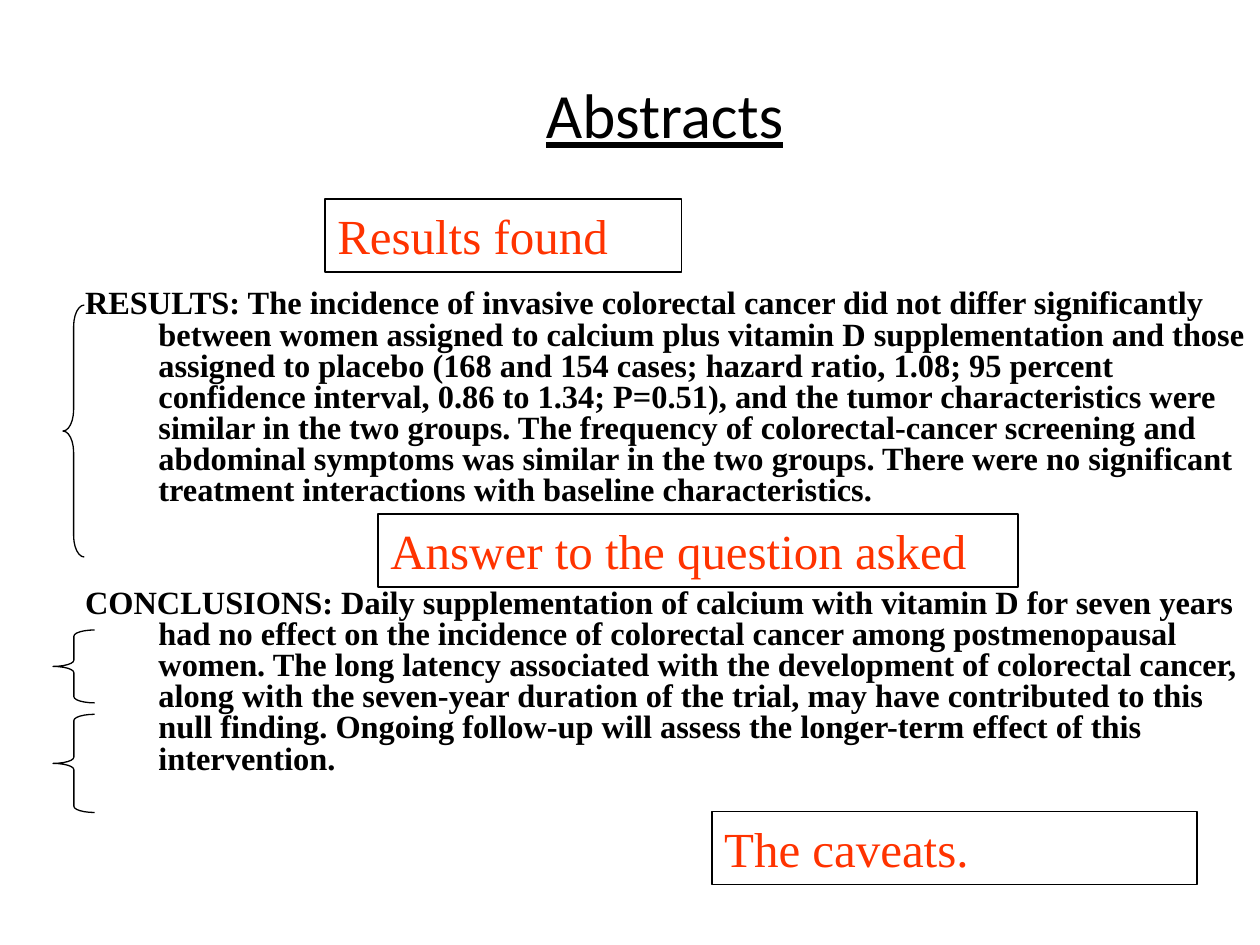
from lxml import etree
from pptx import Presentation
from pptx.dml.color import RGBColor
from pptx.enum.shapes import MSO_SHAPE
from pptx.enum.text import MSO_ANCHOR, MSO_AUTO_SIZE, PP_ALIGN
from pptx.oxml.ns import qn
from pptx.util import Cm, Pt

RECTANGLE, LEFT_BRACE = MSO_SHAPE.RECTANGLE, MSO_SHAPE.LEFT_BRACE
TOP, MIDDLE = MSO_ANCHOR.TOP, MSO_ANCHOR.MIDDLE
LEFT, CENTER = PP_ALIGN.LEFT, PP_ALIGN.CENTER
NO_AUTOFIT = MSO_AUTO_SIZE.NONE
BLACK, WHITE, ORANGE = "000000", "FFFFFF", "FF3300"
SERIF, SANS = "Times New Roman", "Calibri"
LABEL_HEIGHT = 1.47

RESULTS = (
    "RESULTS: The incidence of invasive colorectal cancer did not differ significantly "
    "between women assigned to calcium plus vitamin D supplementation and those assigned "
    "to placebo (168 and 154 cases; hazard ratio, 1.08; 95 percent confidence interval, "
    "0.86 to 1.34; P=0.51), and the tumor characteristics were similar in the two groups. "
    "The frequency of colorectal-cancer screening and abdominal symptoms was similar in "
    "the two groups. There were no significant treatment interactions with baseline "
    "characteristics."
)
CONCLUSIONS = (
    "CONCLUSIONS: Daily supplementation of calcium with vitamin D for seven years had no "
    "effect on the incidence of colorectal cancer among postmenopausal women. The long "
    "latency associated with the development of colorectal cancer, along with the "
    "seven-year duration of the trial, may have contributed to this null finding. Ongoing "
    "follow-up will assess the longer-term effect of this intervention."
)


def color(value):
    """Return the colour for a hex string."""
    return RGBColor.from_string(value)


def place(shape, box):
    """Set a shape's left, top, width and height in centimetres."""
    shape.left, shape.top, shape.width, shape.height = map(Cm, box)


def prepare_frame(shape, anchor):
    """Return a wrapping text frame with fixed size and the given anchor."""
    frame = shape.text_frame
    frame.word_wrap = True
    frame.auto_size = NO_AUTOFIT
    frame.vertical_anchor = anchor
    return frame


def write(paragraph, text, size, font=SERIF, fill=BLACK, align=LEFT, bold=False, underline=False):
    """Add formatted text to a paragraph."""
    paragraph.alignment = align
    run = paragraph.add_run()
    run.text = text
    run.font.name = font
    run.font.size = Pt(size)
    run.font.bold = bold
    run.font.underline = underline
    run.font.color.rgb = color(fill)


def add_title(slide, box):
    """Fill the title placeholder, raised by a deep bottom margin."""
    place(slide.shapes.title, box)
    frame = prepare_frame(slide.shapes.title, MIDDLE)
    frame.margin_bottom = Cm(1.65)
    write(frame.paragraphs[0], "Abstracts", 36, font=SANS, align=CENTER, underline=True)


def add_abstract(slide, box):
    """Fill the body placeholder with hanging paragraphs."""
    body = slide.placeholders[1]
    place(body, box)
    frame = prepare_frame(body, TOP)
    for index, (text, gap) in enumerate(((RESULTS, 0), (CONCLUSIONS, 46.8))):
        paragraph = frame.add_paragraph() if index else frame.paragraphs[0]
        paragraph.level = 1
        paragraph.line_spacing = 0.8
        paragraph.space_before = Pt(gap)
        write(paragraph, text, 18.5, bold=True)
        properties = paragraph._p.get_or_add_pPr()
        properties.set("marL", str(Cm(2.74)))
        properties.set("indent", str(Cm(-1.48)))
        etree.SubElement(properties, qn("a:buNone"))


def add_outline(group, kind, box, line_width):
    """Add a black-outlined shape to a group."""
    shape = group.shapes.add_shape(kind, *map(Cm, box))
    shape.shadow.inherit = False
    shape.line.color.rgb = color(BLACK)
    shape.line.width = Pt(line_width)
    return shape


def add_annotation(slide, box, text, label_offset, label_width, brace_offset, brace_size, curve):
    """Group a label and a brace, both offset from the given left and top."""
    left, top = box
    group = slide.shapes.add_group_shape()
    label_box = (left + label_offset[0], top + label_offset[1], label_width, LABEL_HEIGHT)
    label = add_outline(group, RECTANGLE, label_box, 1)
    label.fill.solid()
    label.fill.fore_color.rgb = color(WHITE)
    write(prepare_frame(label, MIDDLE).paragraphs[0], text, 28, fill=ORANGE)
    brace_box = (left + brace_offset[0], top + brace_offset[1], *brace_size)
    brace = add_outline(group, LEFT_BRACE, brace_box, 0.75)
    brace.fill.background()
    brace.adjustments[0] = curve


def main():
    """Build and save the slide."""
    presentation = Presentation()
    presentation.slide_width, presentation.slide_height = Cm(25.4), Cm(19.05)
    slide = presentation.slides.add_slide(presentation.slide_layouts[1])
    add_title(slide, (1.4, 0.64, 24, 4.83))
    add_abstract(slide, (0.2, 5.72, 25.2, 11.22))
    add_annotation(slide, (1.27, 4.01), "Results found",
                   (5.28, 0), 7.19, (0, 2.14), (0.43, 5.08), 1)
    add_annotation(slide, (1.07, 10.36), "Answer to the question asked",
                   (6.55, 0), 12.9, (0, 2.34), (0.84, 1.47), 0.15)
    add_annotation(slide, (1.07, 14.4), "The caveats.",
                   (13.28, 1.96), 9.78, (0, 0), (0.84, 1.98), 0.15)
    presentation.save("out.pptx")


if __name__ == "__main__":
    main()
